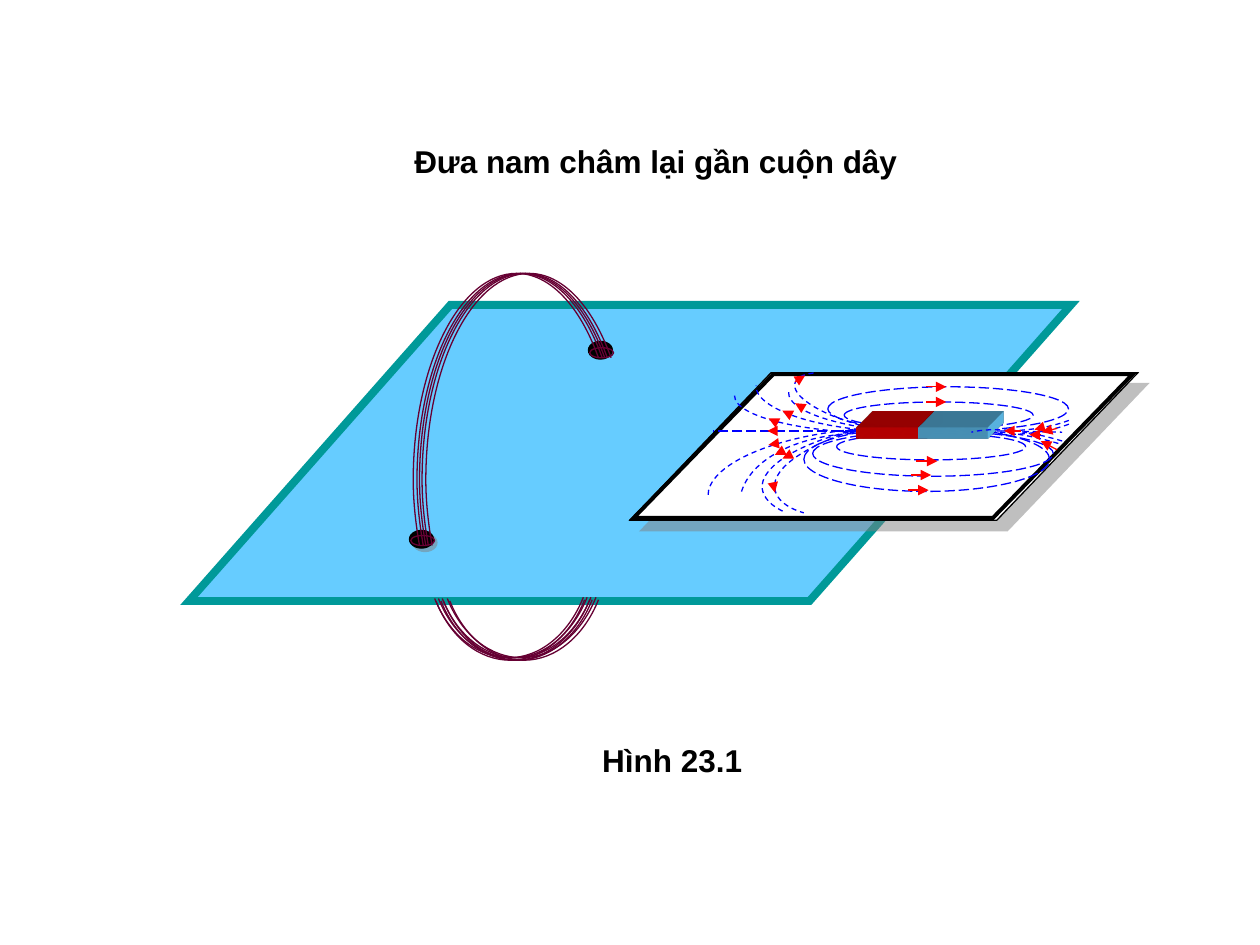
from dataclasses import dataclass

from lxml.etree import SubElement
from pptx import Presentation
from pptx.dml.color import RGBColor
from pptx.enum.dml import MSO_LINE_DASH_STYLE as Dash
from pptx.enum.shapes import MSO_CONNECTOR as Connector, MSO_SHAPE as Shape
from pptx.enum.text import MSO_AUTO_SIZE as AutoSize, PP_ALIGN as Align
from pptx.oxml.ns import qn
from pptx.util import Cm, Pt


@dataclass(frozen=True)
class Theme:
    font: str = "Arial"
    text_size: int = 18
    thin: float = 0.75
    frame: float = 2.25
    thick: float = 4.5
    magnet_depth: int = 26
    black: str = "000000"
    white: str = "FFFFFF"
    board: str = "66CCFF"
    board_edge: str = "009999"
    field: str = "0000FF"
    arrow: str = "FF0000"
    coil: str = "660033"
    shadow: str = "808080"
    north: str = "FF0000"
    south: str = "66CCFF"


def length(inches):
    return Cm(inches * 2.54)


class Diagram:
    """Draws on the current slide; all positions are in inches."""

    def __init__(self, presentation, theme):
        self.theme = theme
        self.slide = presentation.slides.add_slide(presentation.slide_layouts[6])
        self.shapes = self.slide.shapes

    def start_group(self):
        self.shapes = self.slide.shapes.add_group_shape().shapes

    def end_group(self):
        self.shapes = self.slide.shapes

    def style(self, shape, fill=None, line=None, width=None, dash=None):
        shape.shadow.inherit = False
        if fill:
            shape.fill.solid()
            shape.fill.fore_color.rgb = RGBColor.from_string(fill)
        else:
            shape.fill.background()
        if line:
            self.stroke(shape.line, line, width, dash)
        else:
            shape.line.fill.background()

    def stroke(self, line, color, width=None, dash=None):
        line.color.rgb = RGBColor.from_string(color)
        line.width = Pt(width or self.theme.thin)
        if dash:
            line.dash_style = dash

    def preset(self, kind, box, **style):
        shape = self.shapes.add_shape(kind, *map(length, box))
        self.style(shape, **style)
        return shape

    def sheet(self, box, slant, **style):
        """Add a parallelogram with sharp corners."""
        shape = self.preset(Shape.PARALLELOGRAM, box, **style)
        shape.adjustments[0] = slant
        SubElement(shape._element.spPr.find(qn("a:ln")), qn("a:miter"), lim="800000")
        return shape

    def block(self, box, color):
        """Add a rectangle extruded up and to the right."""
        properties = self.preset(Shape.RECTANGLE, box, fill=color)._element.spPr
        scene = SubElement(properties, qn("a:scene3d"))
        SubElement(scene, qn("a:camera"), prst="legacyObliqueTopRight")
        SubElement(scene, qn("a:lightRig"), rig="legacyFlat3", dir="b")
        solid = SubElement(properties, qn("a:sp3d"), extrusionH=str(Pt(self.theme.magnet_depth)),
                           prstMaterial="legacyMatte")
        extrusion = SubElement(solid, qn("a:extrusionClr"))
        SubElement(extrusion, qn("a:srgbClr"), val=color)

    def curve(self, points, **style):
        """Add a chain of cubic curves: a start, then three points per curve."""
        corners = [(length(x), length(y)) for x, y in points]
        builder = self.shapes.build_freeform(*corners[0])
        builder.add_line_segments(corners[1:], close=False)
        shape = builder.convert_to_shape()
        segments = list(shape._element.iter(qn("a:lnTo")))
        outline = segments[0].getparent()
        for first in range(0, len(segments), 3):
            cubic = SubElement(outline, qn("a:cubicBezTo"))
            for segment in segments[first:first + 3]:
                cubic.append(segment[0])
                outline.remove(segment)
        self.style(shape, **style)

    def line(self, ends, color, dash=None, arrow=False):
        connector = self.shapes.add_connector(Connector.STRAIGHT, *map(length, ends))
        self.stroke(connector.line, color, dash=dash)
        properties = connector._element.spPr
        if arrow:
            SubElement(properties.find(qn("a:ln")), qn("a:tailEnd"), type="triangle")
        SubElement(properties, qn("a:effectLst"))

    def drop_shadow(self, shape, distance):
        effects = shape._element.spPr.find(qn("a:effectLst"))
        shadow = SubElement(effects, qn("a:outerShdw"), blurRad="0", dist=str(Pt(distance)),
                            dir=str(45 * 60000), algn="ctr", rotWithShape="0")
        color = SubElement(shadow, qn("a:srgbClr"), val=self.theme.shadow)
        SubElement(color, qn("a:alpha"), val="50000")

    def label(self, box, text):
        text_frame = self.shapes.add_textbox(*map(length, box)).text_frame
        text_frame.word_wrap = True
        text_frame.auto_size = AutoSize.SHAPE_TO_FIT_TEXT
        text_frame.text = text
        paragraph = text_frame.paragraphs[0]
        paragraph.alignment = Align.CENTER
        font = paragraph.runs[0].font
        font.name, font.size, font.bold = self.theme.font, Pt(self.theme.text_size), True
        font.color.rgb = RGBColor.from_string(self.theme.black)


FIELD_LOOPS = [(6.38, 3.39, 1.95, 0.51), (6.7, 3.19, 1.5, 0.21), (6.57, 3.07, 1.91, 0.35),
               (6.45, 3.42, 1.91, 0.36), (6.64, 3.44, 1.5, 0.21)]
FIELD_CURVES = [
    [(6.77, 3.41), (6.11, 3.47), (5.61, 3.7), (5.62, 3.94)],
    [(6.83, 3.44), (6.35, 3.44), (5.95, 3.64), (5.88, 3.92)],
    [(7.07, 3.44), (6.39, 3.44), (5.83, 3.31), (5.83, 3.14)],
    [(6.96, 3.42), (6.42, 3.39), (5.99, 3.23), (6, 3.06)],
    [(8.4, 3.52), (8.1, 3.43), (7.84, 3.41), (7.67, 3.44)],
    [(7.06, 3.42), (6.58, 3.37), (6.26, 3.25), (6.26, 3.12),
     (6.26, 3.12), (6.26, 3.11), (6.26, 3.1)],
    [(6.8, 3.41), (6.33, 3.52), (6.03, 3.71), (6.05, 3.88),
     (6.06, 3.95), (6.12, 4.02), (6.24, 4.07)],
    [(7.95, 3.42), (8.16, 3.42), (8.35, 3.39), (8.5, 3.33)],
    [(6.88, 3.38), (6.42, 3.52), (6.12, 3.71), (6.15, 3.88),
     (6.16, 3.96), (6.24, 4.03), (6.38, 4.07)],
    [(7.04, 3.41), (6.96, 3.4), (6.87, 3.39), (6.78, 3.36), (6.5, 3.28),
     (6.28, 3.14), (6.31, 3.04), (6.32, 3), (6.37, 2.97), (6.46, 2.96)],
]
FRONT_CURVES = [
    [(8.43, 3.5), (8.13, 3.41), (7.87, 3.39), (7.71, 3.43)],
    [(7.95, 3.45), (8.16, 3.45), (8.35, 3.42), (8.5, 3.36)],
]
FIELD_ARROWS = [
    (6.14, 3.42, 6.09, 3.42), (6.17, 3.52, 6.1, 3.53), (6.25, 3.62, 6.21, 3.64),
    (7.23, 3.77, 7.39, 3.77), (6.19, 3.59, 6.15, 3.61), (6.14, 3.34, 6.1, 3.32),
    (6.27, 3.29, 6.21, 3.26), (6.36, 3.23, 6.31, 3.2), (7.27, 3.66, 7.44, 3.66),
    (6.31, 3.03, 6.39, 2.98), (7.35, 3.19, 7.51, 3.19), (6.14, 3.86, 6.15, 3.91),
    (7.35, 3.07, 7.51, 3.07), (8.39, 3.57, 8.26, 3.5), (8.26, 3.45, 8.17, 3.45),
    (8.39, 3.4, 8.27, 3.43), (8.28, 3.39, 8.21, 3.41), (8.1, 3.42, 7.97, 3.42),
    (7.21, 3.89, 7.37, 3.89),
]
UPPER_TURN = [(0, 0.67), (-0.15, 0.25), (-0.39, 0), (-0.65, 0), (-1.1, 0),
              (-1.47, 0.73), (-1.47, 1.64), (-1.47, 1.81), (-1.45, 1.99), (-1.42, 2.16)]
LOWER_TURN = [(0, 0), (0.12, 0.3), (0.35, 0.47), (0.59, 0.47),
              (0.83, 0.47), (1.06, 0.29), (1.18, -0.01)]
UPPER_STARTS = [(x, 2.17) for x in (4.8, 4.78, 4.85, 4.75, 4.82)]
LOWER_STARTS = ([(x, 4.77) for x in (3.57, 3.52, 3.5, 3.46)]
                + [(x, 4.75) for x in (3.55, 3.51, 3.48, 3.45)])


def draw_field_card(diagram):
    theme = diagram.theme
    diagram.start_group()
    card = diagram.sheet((5, 2.96, 4.03, 1.17), 0.956, fill=theme.white, line=theme.black)
    diagram.drop_shadow(card, 8.5)
    diagram.sheet((5.03, 2.97, 3.96, 1.14), 0.972,
                  fill=theme.white, line=theme.black, width=theme.frame)
    for loop in FIELD_LOOPS:
        diagram.preset(Shape.OVAL, loop, line=theme.field, dash=Dash.LONG_DASH)
    diagram.line((7.13, 3.42, 5.66, 3.42), theme.field, Dash.LONG_DASH)
    diagram.line((7.91, 3.42, 8.43, 3.43), theme.field, Dash.DASH)
    for points in FIELD_CURVES:
        diagram.curve(points, line=theme.field, dash=Dash.DASH)
    for left, color in ((6.8, theme.north), (7.29, theme.south)):
        diagram.block((left, 3.39, 0.55, 0.09), color)
    for points in FRONT_CURVES:
        diagram.curve(points, line=theme.field, dash=Dash.DASH)
    for ends in FIELD_ARROWS:
        diagram.line(ends, theme.arrow, arrow=True)
    diagram.end_group()


def draw_coil(diagram):
    theme = diagram.theme
    diagram.start_group()
    hole = diagram.preset(Shape.OVAL, (3.25, 4.21, 0.19, 0.14), fill=theme.black, line=theme.black)
    diagram.drop_shadow(hole, 2.8)
    diagram.preset(Shape.OVAL, (4.67, 2.71, 0.19, 0.14), fill=theme.black, line=theme.black)
    for turn, starts in ((UPPER_TURN, UPPER_STARTS), (LOWER_TURN, LOWER_STARTS)):
        for left, top in starts:
            diagram.curve([(left + x, top + y) for x, y in turn], line=theme.coil)
    for left, top in ((3.26, 4.25), (4.68, 2.76)):
        diagram.preset(Shape.OVAL, (left, top, 0.19, 0.08), line=theme.coil)
    diagram.end_group()


def main():
    presentation = Presentation()
    presentation.slide_width, presentation.slide_height = Cm(25.4), Cm(19.05)
    theme = Theme()
    diagram = Diagram(presentation, theme)
    diagram.sheet((1.5, 2.42, 7, 2.35), 0.883,
                  fill=theme.board, line=theme.board_edge, width=theme.thick)
    draw_field_card(diagram)
    draw_coil(diagram)
    diagram.label((3.75, 5.83, 3.17, 0.4), "Hình 23.1")
    diagram.label((2.58, 1.08, 5.25, 0.4), "Đưa nam châm lại gần cuộn dây")
    presentation.save("out.pptx")


if __name__ == "__main__":
    main()
